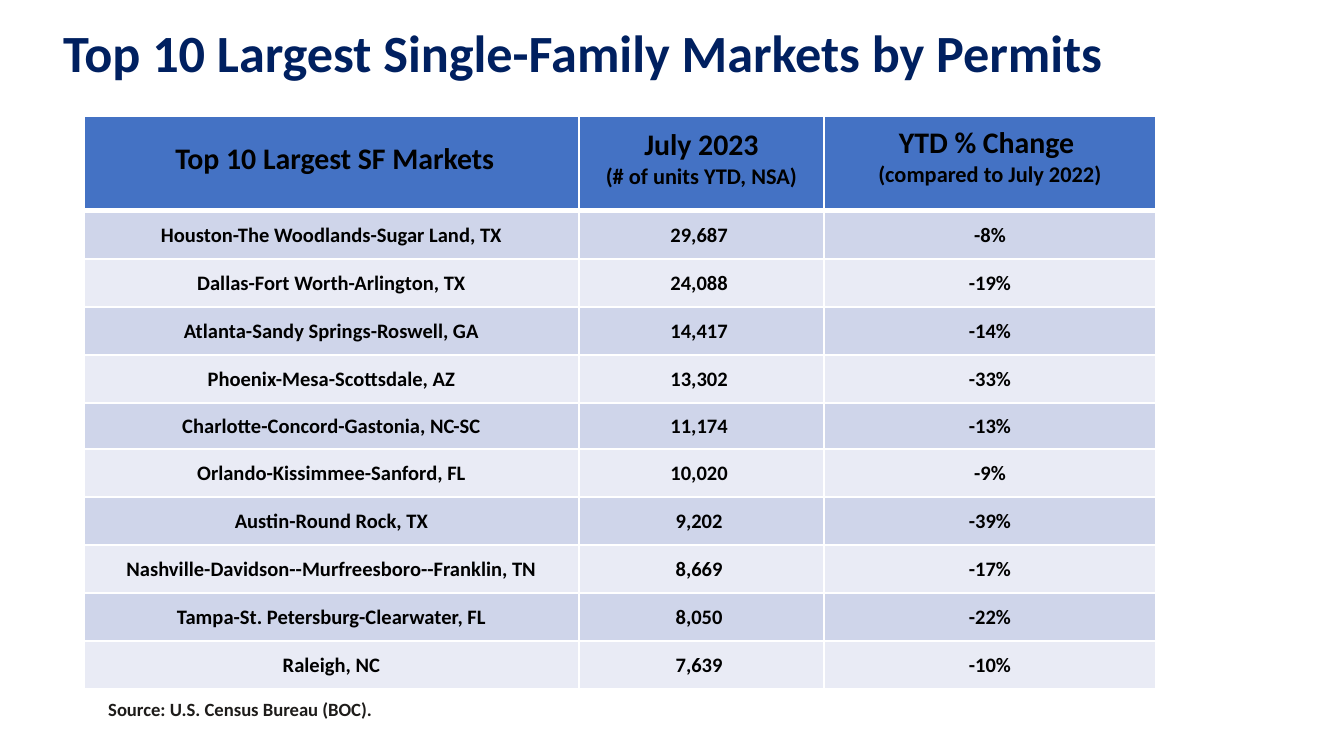
import lxml.etree
import pptx
import pptx.dml.color
import pptx.enum.text
import pptx.oxml.ns
import pptx.util

PX = 914400 / 134.4  # EMU per px
THEME = {
    "font": "Calibri",
    "title": "002060", "ink": "000000", "source": "1E1C1A",
    "header": "4472C4", "bands": ("CFD5EA", "E9EBF5"), "border": "FFFFFF",
    "title_size": 28, "head_size": 16, "note_size": 12, "body_size": 11, "source_size": 10,
}
ALIGN = pptx.enum.text.PP_ALIGN
ANCHOR = pptx.enum.text.MSO_ANCHOR


def px(count):
    return pptx.util.Emu(round(count * PX))


def add_span(para, text, size, color):
    span = para.add_run()
    span.text = text
    span.font.name = THEME["font"]
    span.font.size = pptx.util.Pt(size)
    span.font.bold = True
    span.font.color.rgb = pptx.dml.color.RGBColor.from_string(color)


deck = pptx.Presentation()
deck.slide_width, deck.slide_height = px(1344), px(756)
page = deck.slides.add_slide(deck.slide_layouts[6])

# Title
title = page.shapes.add_textbox(px(63), px(12), px(1091), px(87)).text_frame
title.word_wrap = True
title.vertical_anchor = ANCHOR.MIDDLE
title.margin_left = title.margin_top = title.margin_right = title.margin_bottom = 0
para = title.paragraphs[0]
para.line_spacing = 0.9
para.space_after = pptx.util.Pt(6)
add_span(para, "Top 10 Largest Single-Family Markets by Permits",
         THEME["title_size"], THEME["title"])

# Table content: each header is its lines and its bottom margin
headers = [
    ([" Top 10 Largest SF Markets"], 33),
    (["July 2023", "(# of units YTD, NSA)"], 20),
    (["YTD % Change ", "(compared to July 2022)"], 22),
]
markets = [
    ("Houston-The Woodlands-Sugar Land, TX", "29,687 ", "-8%"),
    ("Dallas-Fort Worth-Arlington, TX", "24,088 ", "-19%"),
    ("Atlanta-Sandy Springs-Roswell, GA", "14,417 ", "-14%"),
    ("Phoenix-Mesa-Scottsdale, AZ", "13,302 ", "-33%"),
    ("Charlotte-Concord-Gastonia, NC-SC", "11,174 ", "-13%"),
    ("Orlando-Kissimmee-Sanford, FL", "10,020 ", "-9%"),
    ("Austin-Round Rock, TX", "9,202 ", "-39%"),
    ("Nashville-Davidson--Murfreesboro--Franklin, TN", "8,669 ", "-17%"),
    ("Tampa-St. Petersburg-Clearwater, FL", "8,050 ", "-22%"),
    ("Raleigh, NC", "7,639 ", "-10%"),
]
rows = [headers] + [[([text], 0) for text in market] for market in markets]
widths = [495, 245, 332]
heights = [95] + [48] * 4 + [46] + [48] * 5

# Table grid
table = page.shapes.add_table(len(rows), len(widths), px(84), px(116),
                              px(sum(widths)), px(sum(heights))).table
table.first_row = table.horz_banding = False
for column, width in zip(table.columns, widths):
    column.width = px(width)
for row, height in zip(table.rows, heights):
    row.height = px(height)

# Table cells
for row_index, row in enumerate(rows):
    is_header = row_index == 0
    fill = THEME["header"] if is_header else THEME["bands"][(row_index - 1) % 2]
    sizes = (THEME["head_size"], THEME["note_size"]) if is_header else (THEME["body_size"],)
    for column_index, (lines, bottom) in enumerate(row):
        cell = table.cell(row_index, column_index)
        cell.vertical_anchor = ANCHOR.BOTTOM if is_header else ANCHOR.MIDDLE
        cell.margin_left = cell.margin_top = cell.margin_right = px(1)
        cell.margin_bottom = px(bottom)

        # Borders, with a thick rule under the header
        properties = cell._tc.get_or_add_tcPr()
        for side in "LRTB":
            thick = (side == "B" and is_header) or (side == "T" and row_index == 1)
            line = lxml.etree.SubElement(properties, pptx.oxml.ns.qn(f"a:ln{side}"),
                                         w=str(pptx.util.Pt(3 if thick else 1)))
            solid = lxml.etree.SubElement(line, pptx.oxml.ns.qn("a:solidFill"))
            lxml.etree.SubElement(solid, pptx.oxml.ns.qn("a:srgbClr"), val=THEME["border"])
        cell.fill.solid()
        cell.fill.fore_color.rgb = pptx.dml.color.RGBColor.from_string(fill)

        for line_index, (text, size) in enumerate(zip(lines, sizes)):
            frame = cell.text_frame
            para = frame.add_paragraph() if line_index else frame.paragraphs[0]
            para.alignment = ALIGN.CENTER
            add_span(para, text, size, THEME["ink"])

# Source line
source = page.shapes.add_textbox(px(95), px(691), px(637), px(36)).text_frame
source.word_wrap = True
add_span(source.paragraphs[0], "Source: U.S. Census Bureau (BOC).",
         THEME["source_size"], THEME["source"])

deck.save("out.pptx")
